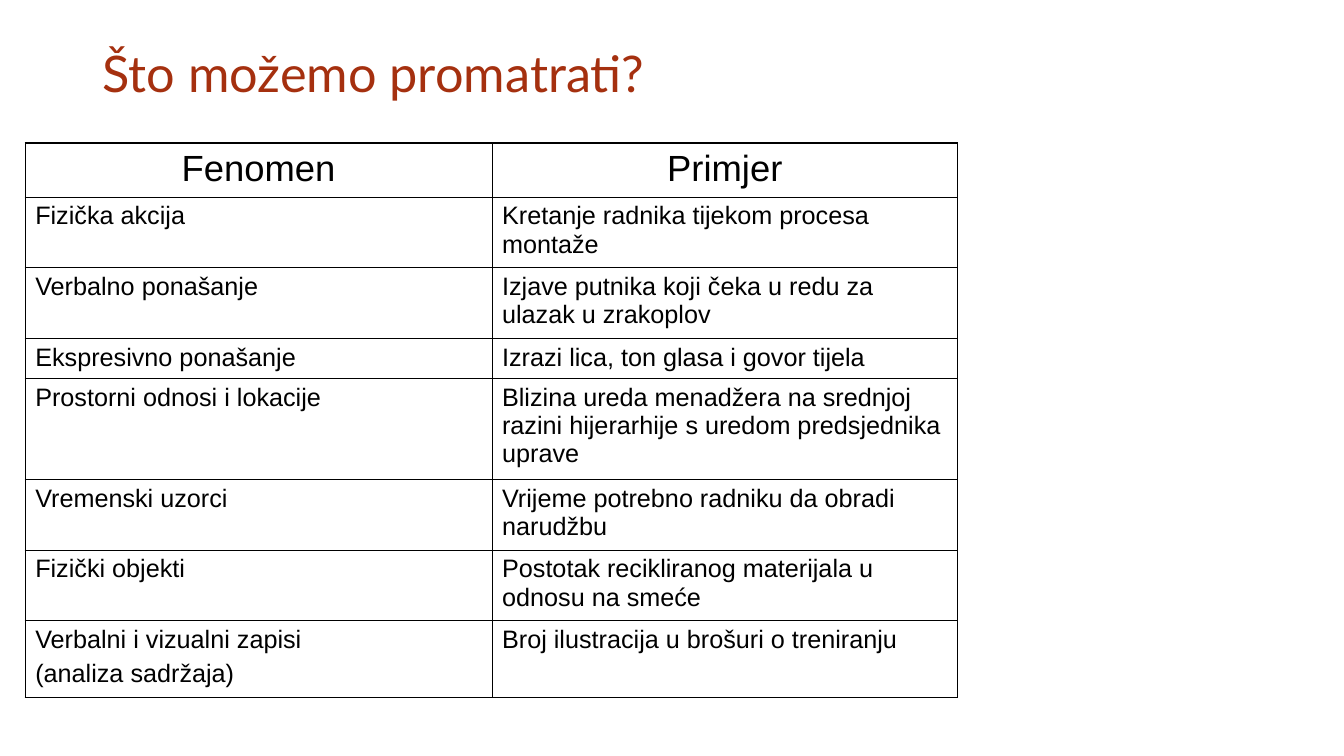
from lxml import etree
from pptx import Presentation
from pptx.dml.color import RGBColor
from pptx.enum import text
from pptx.oxml import ns
from pptx.util import Inches, Pt

COLORS = {"title": "A5300F", "ink": "000000", "paper": "FFFFFF"}
OUTER, INNER = 1.08, 0.45
COLUMN_WIDTHS = [4.63, 4.62]
ROW_HEIGHTS = [0.53, 0.7, 0.7, 0.4, 1, 0.7, 0.7, 0.76]
ROWS = [
    ("Fenomen", "Primjer"),
    ("Fizička akcija", "Kretanje radnika tijekom procesa montaže"),
    ("Verbalno ponašanje", "Izjave putnika koji čeka u redu za ulazak u zrakoplov"),
    ("Ekspresivno ponašanje", "Izrazi lica, ton glasa i govor tijela"),
    ("Prostorni odnosi i lokacije",
     "Blizina ureda menadžera na srednjoj razini hijerarhije s uredom predsjednika uprave"),
    ("Vremenski uzorci", "Vrijeme potrebno radniku da obradi narudžbu"),
    ("Fizički objekti", "Postotak recikliranog materijala u odnosu na smeće"),
    ("Verbalni i vizualni zapisi\n(analiza sadržaja)", "Broj ilustracija u brošuri o treniranju"),
]


def style(para, font, size, color):
    for span in para.runs:
        span.font.name = font
        span.font.size = Pt(size)
        span.font.color.rgb = RGBColor.from_string(COLORS[color])


def add_border(cell, side, width):
    line = etree.SubElement(cell._tc.get_or_add_tcPr(), ns.qn(f"a:ln{side}"), w=str(Pt(width)))
    fill = etree.SubElement(line, ns.qn("a:solidFill"))
    etree.SubElement(fill, ns.qn("a:srgbClr"), val=COLORS["ink"])


deck = Presentation()
deck.slide_width = Inches(13.33)
deck.slide_height = Inches(7.5)
page = deck.slides.add_slide(deck.slide_layouts[6])

title = page.shapes.add_textbox(Inches(0.92), Inches(0.17), Inches(8.25), Inches(0.9)).text_frame
title.word_wrap = True
title.vertical_anchor = text.MSO_ANCHOR.BOTTOM
title.text = "Što možemo promatrati?"
style(title.paragraphs[0], "Lato", 36, "title")

table = page.shapes.add_table(len(ROWS), len(COLUMN_WIDTHS), Inches(0.25), Inches(1.42),
                              Inches(9.25), Inches(5.5)).table
table.first_row = False
table.horz_banding = False
for column, width in zip(table.columns, COLUMN_WIDTHS):
    column.width = Inches(width)

last_row, last_column = len(ROWS) - 1, len(COLUMN_WIDTHS) - 1
for r, (height, wording) in enumerate(zip(ROW_HEIGHTS, ROWS)):
    table.rows[r].height = Inches(height)
    for c, words in enumerate(wording):
        cell = table.cell(r, c)
        edges = {"L": c == 0, "R": c == last_column, "T": r == 0, "B": r == last_row}
        for side, is_outer in edges.items():
            add_border(cell, side, OUTER if is_outer else INNER)
        cell.fill.solid()
        cell.fill.fore_color.rgb = RGBColor.from_string(COLORS["paper"])
        cell.text_frame.text = words
        for para in cell.text_frame.paragraphs:
            para.alignment = text.PP_ALIGN.CENTER if r == 0 else text.PP_ALIGN.LEFT
            para.space_before = Pt(6.5 if r == 0 else 4.5)
            style(para, "Arial", 26 if r == 0 else 18, "ink")

deck.save("out.pptx")
